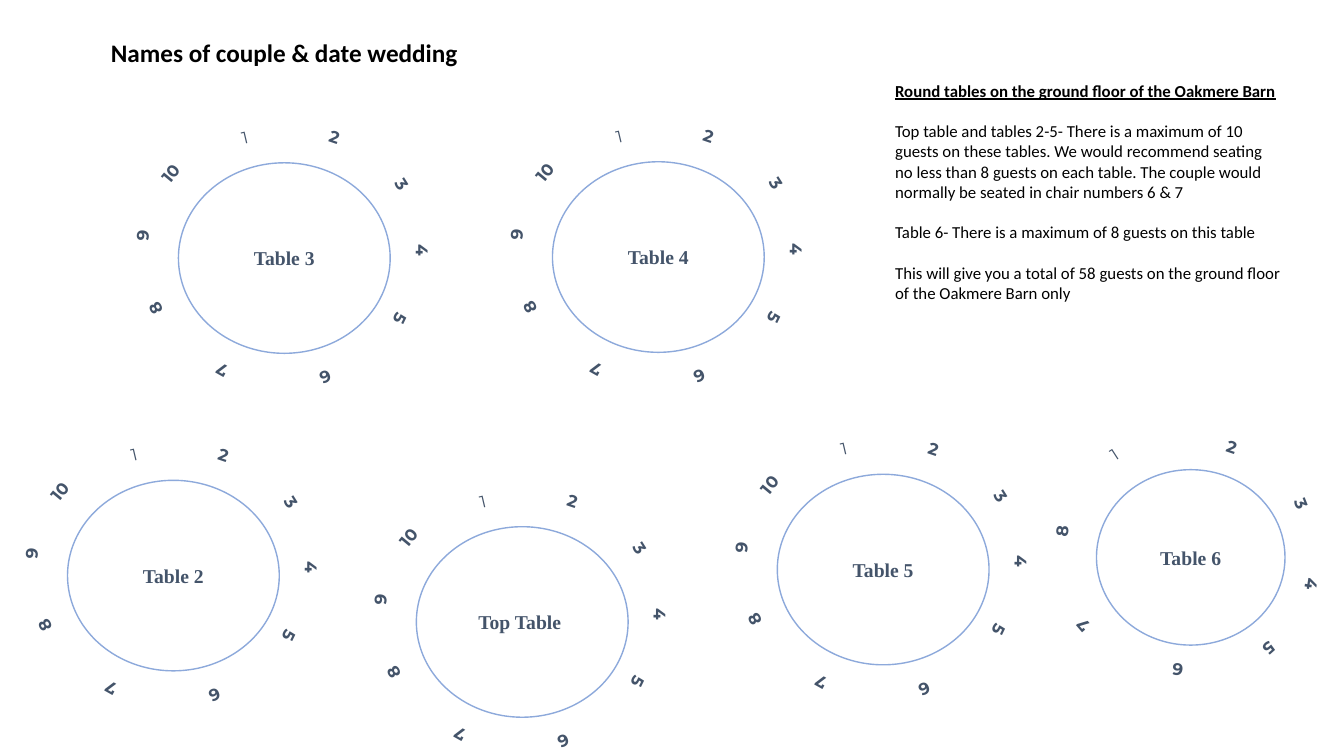
from pptx import Presentation
from pptx.dml.color import RGBColor
from pptx.enum.shapes import MSO_SHAPE
from pptx.enum.text import MSO_ANCHOR, MSO_AUTO_SIZE, PP_ALIGN
from pptx.util import Inches, Pt

BLACK = RGBColor(0x00, 0x00, 0x00)
SLATE = RGBColor(0x44, 0x54, 0x6A)
OUTLINE = RGBColor(0x8D, 0xA9, 0xDB)

WIDE, TALL = (0.76, 0.58), (0.58, 0.76)

# Chairs in number order: offset from the table centre, rotation, size
LARGE_CHAIRS = [
    (-0.39, -1.2, 346.7, WIDE),
    (0.5, -1.2, 18.8, WIDE),
    (1.17, -0.73, 57.8, WIDE),
    (1.37, -0.08, 90, TALL),
    (1.15, 0.6, 116, WIDE),
    (0.41, 1.19, 157.7, WIDE),
    (-0.62, 1.12, 209.2, TALL),
    (-1.28, 0.5, 242.8, TALL),
    (-1.41, -0.22, 275.4, TALL),
    (-1.13, -0.84, 309.8, TALL),
]
SMALL_CHAIRS = [
    (-0.76, -1.02, 327.2, WIDE),
    (0.41, -1.1, 18.8, WIDE),
    (1.1, -0.53, 68.4, WIDE),
    (1.2, 0.27, 98.6, TALL),
    (0.78, 0.91, 138.3, WIDE),
    (-0.13, 1.12, 187, WIDE),
    (-1.07, 0.68, 229.4, TALL),
    (-1.28, -0.26, 276.8, TALL),
]
LARGE = ((2.1, 1.89), LARGE_CHAIRS)
SMALL = ((1.87, 1.74), SMALL_CHAIRS)

# Tables: name, centre, kind
TABLES = [
    ("Table 4", (6.53, 2.55), LARGE),
    ("Table 3", (2.82, 2.56), LARGE),
    ("Table 2", (1.72, 5.71), LARGE),
    ("Table 5", (8.76, 5.65), LARGE),
    ("Table 6", (11.81, 5.53), SMALL),
    ("Top Table ", (5.18, 6.17), LARGE),
]

NOTES_HEADING = "Round tables on the ground floor of the Oakmere Barn"
NOTES = [
    "Top table and tables 2-5- There is a maximum of 10 guests on these tables. "
    "We would recommend seating no less than 8 guests on each table. "
    "The couple would normally be seated in chair numbers 6 & 7",
    "Table 6- There is a maximum of 8 guests on this table",
    "This will give you a total of 58 guests on the ground floor of the Oakmere Barn only",
]


class SeatingPlan:
    body_font = "Calibri"
    table_font = "Times New Roman"
    chair_font = "Montserrat"

    def __init__(self, slide):
        self.slide = slide

    def style(self, paragraph, name, size, color, bold=False):
        font = paragraph.font
        font.name, font.size, font.bold = name, Pt(size), bold
        font.color.rgb = color

    def title(self, text, left, top, width, height):
        shape = self.slide.shapes.title
        shape.left, shape.top = Inches(left), Inches(top)
        shape.width, shape.height = Inches(width), Inches(height)
        frame = shape.text_frame
        frame.text = text
        frame.vertical_anchor = MSO_ANCHOR.TOP
        frame.auto_size = MSO_AUTO_SIZE.SHAPE_TO_FIT_TEXT
        paragraph = frame.paragraphs[0]
        paragraph.alignment = PP_ALIGN.LEFT
        self.style(paragraph, self.body_font, 18, BLACK, bold=True)

    def notes(self, heading, texts, left, top, width, height):
        shape = self.slide.shapes.add_textbox(
            Inches(left), Inches(top), Inches(width), Inches(height))
        frame = shape.text_frame
        frame.word_wrap = True
        frame.auto_size = MSO_AUTO_SIZE.SHAPE_TO_FIT_TEXT
        paragraph = frame.paragraphs[0]
        paragraph.text = heading
        self.style(paragraph, self.body_font, 12, BLACK, bold=True)
        paragraph.font.underline = True
        for text in texts:
            paragraph = frame.add_paragraph()
            paragraph.text = text
            paragraph.space_before = Pt(14.5)
            self.style(paragraph, self.body_font, 12, BLACK)

    def oval(self, group, text, center, size, font, points, bold=True):
        (x, y), (width, height) = center, size
        shape = group.shapes.add_shape(
            MSO_SHAPE.OVAL, Inches(x - width / 2), Inches(y - height / 2),
            Inches(width), Inches(height))
        shape.shadow.inherit = False
        shape.fill.background()
        shape.line.fill.background()
        frame = shape.text_frame
        frame.margin_left = frame.margin_right = 0
        frame.margin_top = frame.margin_bottom = 0
        frame.vertical_anchor = MSO_ANCHOR.MIDDLE
        paragraph = frame.paragraphs[0]
        paragraph.text = text
        paragraph.alignment = PP_ALIGN.CENTER
        self.style(paragraph, font, points, SLATE, bold)
        return shape

    def round_table(self, name, center, kind):
        size, chairs = kind
        group = self.slide.shapes.add_group_shape()
        table = self.oval(group, name, center, size, self.table_font, 14)
        table.line.color.rgb = OUTLINE
        table.line.width = Pt(1)
        for number, (across, down, rotation, chair_size) in enumerate(chairs, 1):
            chair = self.oval(
                group, str(number), (center[0] + across, center[1] + down),
                chair_size, self.chair_font, 12, bold=number > 1)
            chair.rotation = rotation


def main():
    presentation = Presentation()
    presentation.slide_width = Inches(13.33)
    presentation.slide_height = Inches(7.5)
    plan = SeatingPlan(presentation.slides.add_slide(presentation.slide_layouts[5]))

    # Heading and guidance
    plan.title("Names of couple & date wedding", 1, 0.32, 5.8, 0.4)
    plan.notes(NOTES_HEADING, NOTES, 8.78, 0.75, 4.03, 2.52)

    # Tables with their numbered chairs
    for name, center, kind in TABLES:
        plan.round_table(name, center, kind)

    presentation.save("out.pptx")


if __name__ == "__main__":
    main()
